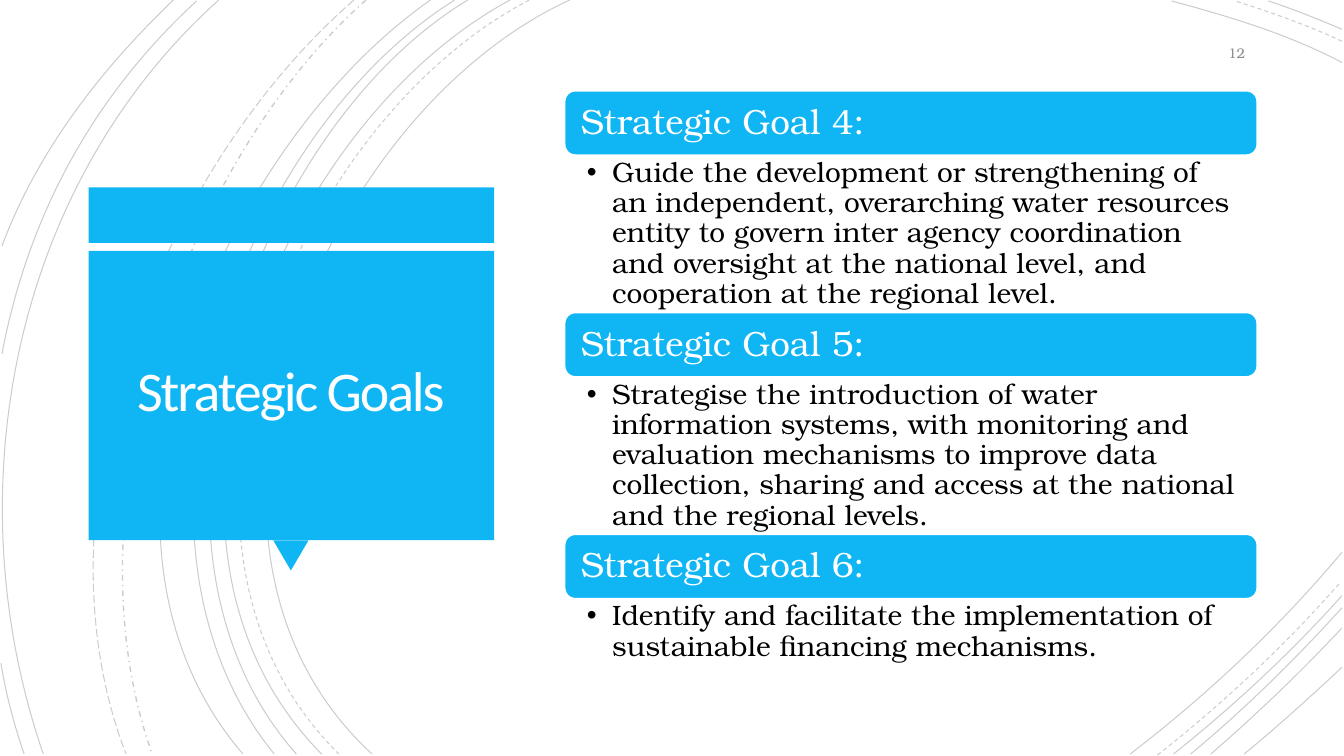
"""Build the Strategic Goals slide with its arc backdrop and three goal blocks."""
from dataclasses import dataclass

import lxml.etree
import pptx
import pptx.dml.color
import pptx.enum.dml
import pptx.enum.shapes
import pptx.enum.text
import pptx.oxml.ns
import pptx.util

Inches = pptx.util.Inches
Dash = pptx.enum.dml.MSO_LINE
Preset = pptx.enum.shapes.MSO_SHAPE
Align = pptx.enum.text.PP_ALIGN
Anchor = pptx.enum.text.MSO_ANCHOR

BLUE, WHITE, BLACK, GREY = "10B6F4", "FFFFFF", "000000", "8C8C8C"
SERIF, SANS = "TeX Gyre Bonum", "Calibri"
GOAL_LEFT, GOAL_TOP, GOAL_WIDTH = 5.6, 0.9, 6.87
HEADING_HEIGHT, GOAL_PITCH = 0.64, 2.2


@dataclass
class Arc:
    """A cubic curve given by its start, two controls and end, in inches."""
    points: tuple
    dash: object = Dash.SOLID
    weight: float = 0.75


@dataclass
class Goal:
    """A numbered goal, its description and the height of that description."""
    number: int
    text: str
    height: float


ARCS = [
    Arc(((5.65, 0), (3.15, 1.15), (1.43, 5.4), (3.69, 7.48))),
    Arc(((13.31, 0.62), (12.78, 0.34), (12.18, 0.16), (11.62, 0.01))),
    Arc(((11.21, 7.48), (11.97, 6.9), (12.69, 6.22), (13.31, 5.48))),
    Arc(((5.25, 0), (2.85, 1.25), (1.23, 5.37), (3.36, 7.48)), Dash.DASH),
    Arc(((13.31, 0.41), (12.97, 0.25), (12.6, 0.12), (12.25, 0.01)), Dash.DASH),
    Arc(((11.48, 7.49), (12.13, 6.98), (12.75, 6.4), (13.3, 5.77)), Dash.DASH),
    Arc(((5.06, 0), (2.7, 1.27), (1.1, 5.37), (3.19, 7.48))),
    Arc(((13.31, 0.29), (13.07, 0.19), (12.83, 0.09), (12.58, 0.01))),
    Arc(((11.64, 7.48), (12.23, 7.01), (12.8, 6.48), (13.31, 5.91))),
    Arc(((4.64, 0), (2.44, 1.33), (1.1, 5.41), (2.94, 7.48))),
    Arc(((11.81, 7.48), (12.34, 7.04), (12.84, 6.55), (13.31, 6.03))),
    Arc(((4.51, 0), (2.31, 1.38), (0.97, 5.33), (2.72, 7.48))),
    Arc(((12.01, 7.48), (12.46, 7.09), (12.9, 6.67), (13.31, 6.23))),
    Arc(((4.27, 0), (2.17, 1.47), (0.53, 5.29), (2.41, 7.48))),
    Arc(((12.34, 7.48), (12.67, 7.21), (12.99, 6.92), (13.31, 6.62))),
    Arc(((3.63, 0), (1.76, 1.66), (0.65, 5.09), (1.51, 7.48)), Dash.DASH_DOT, 1),
    Arc(((3.51, 0), (1.57, 1.69), (0.29, 4.99), (1.25, 7.48)), Dash.LONG_DASH),
    Arc(((2.17, 0), (0.11, 1.85), (-0.46, 4.9), (0.43, 7.48))),
    Arc(((1.95, 0.01), (0.92, 0.96), (0.28, 2.14), (0.02, 3.51))),
    Arc(((0.01, 6.58), (0.06, 6.89), (0.14, 7.19), (0.24, 7.48))),
    Arc(((1.72, 0), (1, 0.69), (0.37, 1.5), (0.02, 2.44))),
]

GOALS = [
    Goal(4, "Guide the development or strengthening of an independent, overarching "
            "water resources entity to govern inter agency coordination and oversight "
            "at the national level, and cooperation at the regional level.", 1.56),
    Goal(5, "Strategise the introduction of water information systems, with monitoring "
            "and evaluation mechanisms to improve data collection, sharing and access "
            "at the national and the regional levels.", 1.56),
    Goal(6, "Identify and facilitate the implementation of sustainable financing "
            "mechanisms.", 0.66),
]


def colour(value: str) -> pptx.dml.color.RGBColor:
    """Turn a hex string into a colour."""
    return pptx.dml.color.RGBColor.from_string(value)


def add_child(parent, tag: str, **attributes: str):
    """Append a drawing element to a parent element."""
    return lxml.etree.SubElement(parent, pptx.oxml.ns.qn(tag), attributes)


def place(shape, left: float, top: float, width: float, height: float) -> None:
    """Move and size a shape in inches."""
    shape.left, shape.top = Inches(left), Inches(top)
    shape.width, shape.height = Inches(width), Inches(height)


def bend(shape) -> None:
    """Turn the three straight segments of a freeform into one cubic curve."""
    segments = list(shape.element.iter(pptx.oxml.ns.qn("a:lnTo")))
    outline = segments[0].getparent()
    curve = add_child(outline, "a:cubicBezTo")
    for segment in segments:
        curve.append(segment[0])
        outline.remove(segment)


def draw_arc(page, arc: Arc) -> None:
    """Draw one faint backdrop arc."""
    start, *rest = [(Inches(x), Inches(y)) for x, y in arc.points]
    builder = page.shapes.build_freeform(*start)
    builder.add_line_segments(rest, close=False)
    shape = builder.convert_to_shape()
    bend(shape)
    shape.shadow.inherit = False
    shape.fill.background()
    shape.line.color.rgb = colour(BLACK)
    shape.line.width = pptx.util.Pt(arc.weight)
    shape.line.dash_style = arc.dash
    tint = shape.line._ln.find(".//" + pptx.oxml.ns.qn("a:srgbClr"))
    add_child(tint, "a:alpha", val="20000")


def draw_block(page, preset, left: float, top: float, width: float, height: float):
    """Draw a borderless blue shape."""
    shape = page.shapes.add_shape(preset, Inches(left), Inches(top),
                                  Inches(width), Inches(height))
    shape.shadow.inherit = False
    shape.fill.solid()
    shape.fill.fore_color.rgb = colour(BLUE)
    shape.line.fill.background()
    return shape


def write(shape, text: str, size: float, shade: str, font: str = SERIF,
          align=Align.LEFT, anchor=Anchor.MIDDLE, spacing: float = 0.9,
          insets: tuple = (0.1, 0.05, 0.1, 0.05)):
    """Put one formatted run in a shape and return its paragraph and run."""
    frame = shape.text_frame
    frame.word_wrap = True
    frame.auto_size = pptx.enum.text.MSO_AUTO_SIZE.NONE
    frame.vertical_anchor = anchor
    frame.margin_left, frame.margin_top, frame.margin_right, frame.margin_bottom = (
        Inches(inset) for inset in insets)
    para = frame.paragraphs[0]
    para.alignment = align
    para.line_spacing = spacing
    para.space_before = pptx.util.Pt(0)
    span = para.add_run()
    span.text = text
    span.font.size = pptx.util.Pt(size)
    span.font.name = font
    span.font.bold = False
    span.font.color.rgb = colour(shade)
    return para, span


def draw_goal(page, goal: Goal, body, top: float) -> None:
    """Draw a goal heading and fill the body placeholder below it."""
    heading = draw_block(page, Preset.ROUNDED_RECTANGLE, GOAL_LEFT, top,
                         GOAL_WIDTH, HEADING_HEIGHT)
    heading.line.color.rgb = colour(WHITE)
    heading.line.width = pptx.util.Pt(1.25)
    write(heading, f"Strategic Goal {goal.number}:", 25, WHITE,
          insets=(0.13, 0.1, 0.13, 0.1))
    place(body, GOAL_LEFT, top + HEADING_HEIGHT, GOAL_WIDTH, goal.height)
    para, _ = write(body, goal.text, 20, BLACK, anchor=Anchor.TOP,
                    insets=(0.22, 0.03, 0.19, 0.03))
    properties = para._p.get_or_add_pPr()
    properties.set("marL", str(Inches(0.25)))
    properties.set("indent", str(Inches(-0.25)))
    add_child(properties, "a:buChar", char="•")


def draw_title(page) -> None:
    """Draw the blue callout and place the title in front of it."""
    draw_block(page, Preset.RECTANGLE, 0.88, 1.86, 4.02, 0.55)
    draw_block(page, Preset.ISOSCELES_TRIANGLE, 2.71, 5.36, 0.35, 0.3).rotation = 180
    draw_block(page, Preset.RECTANGLE, 0.88, 2.49, 4.02, 2.87)
    title = page.shapes.title
    place(title, 0.97, 2.57, 3.83, 2.69)
    _, span = write(title, "Strategic Goals", 40, "FFFEFF", SANS, Align.CENTER,
                    spacing=0.85, insets=(0.25,) * 4)
    span.font._element.set("spc", "-150")
    title.element.getparent().append(title.element)


def main() -> None:
    """Build and save the deck."""
    deck = pptx.Presentation()
    deck.slide_width, deck.slide_height = Inches(13.33), Inches(7.5)
    page = deck.slides.add_slide(deck.slide_layouts.get_by_name("Comparison"))
    _, *bodies, spare = page.placeholders
    spare.element.getparent().remove(spare.element)
    for arc in ARCS:
        draw_arc(page, arc)
    draw_title(page)
    for index, (goal, body) in enumerate(zip(GOALS, bodies)):
        draw_goal(page, goal, body, GOAL_TOP + index * GOAL_PITCH)
        body.element.getparent().append(body.element)
    number = page.shapes.add_textbox(Inches(11.45), Inches(0.35), Inches(1), Inches(0.35))
    write(number, "12", 10, GREY, align=Align.RIGHT, spacing=1.0)
    deck.save("out.pptx")


if __name__ == "__main__":
    main()
